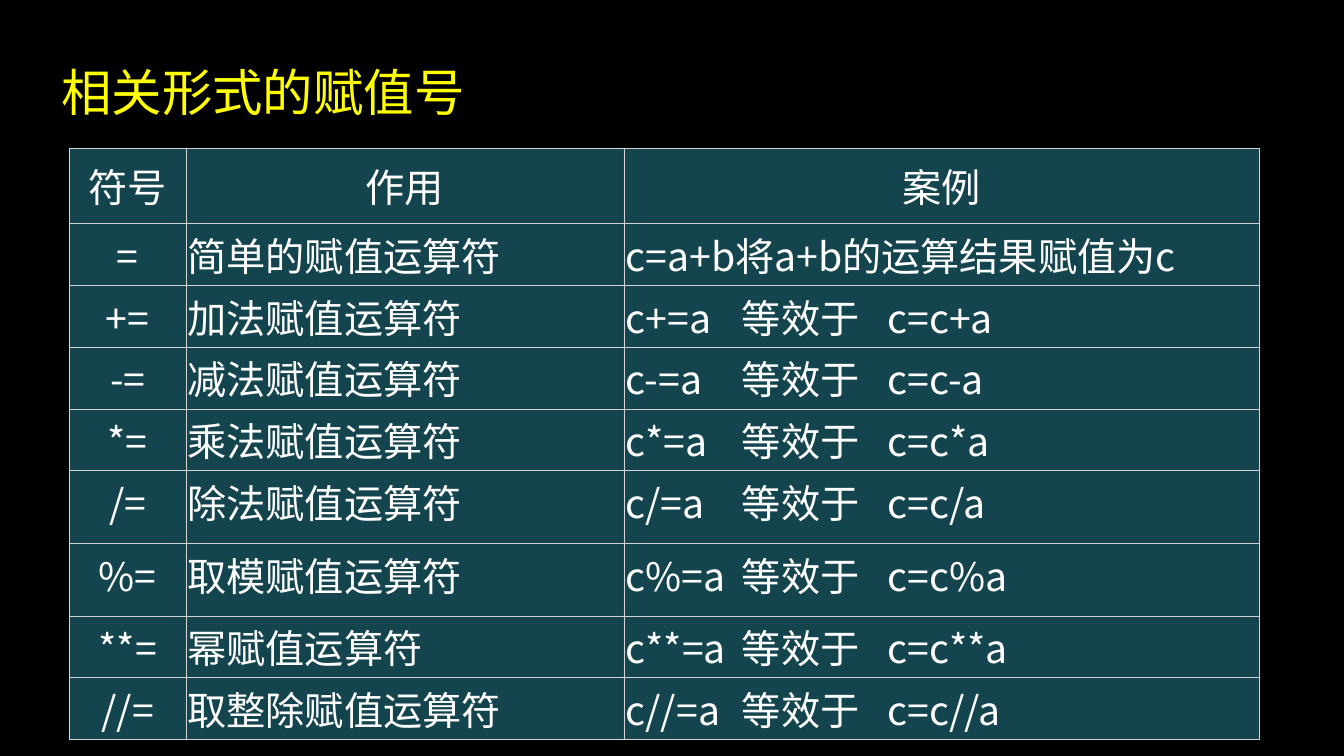
from pptx import Presentation
from pptx.dml.color import RGBColor
from pptx.enum import text as t
from pptx.oxml import parse_xml
from pptx.oxml.ns import nsdecls, qn
from pptx.util import Pt

FACE = "Noto Sans CJK SC"
HEAD = ["符号", "作用", "案例"]
ROWS = [
    ("=", "简单的", "c=a+b将a+b的运算结果赋值为c"),
    ("+=", "加法", "c+=a\t等效于\tc=c+a"),
    ("-=", "减法", "c-=a\t等效于\tc=c-a"),
    ("*=", "乘法", "c*=a\t等效于\tc=c*a"),
    ("/=", "除法", "c/=a\t等效于\tc=c/a"),
    ("%=", "取模", "c%=a\t等效于\tc=c%a"),
    ("**=", "幂", "c**=a\t等效于\tc=c**a"),
    ("//=", "取整除", "c//=a\t等效于\tc=c//a"),
]
WIDTHS = [83, 313, 454]
HEIGHTS = [54, 43, 43, 43, 43, 52, 52, 43, 43]
TABS = [83, 187]


def color(code):
    return RGBColor.from_string(code)


def style(para, size, code):
    for run in para.runs:
        font = run.font
        font.size = Pt(size)
        font.name = FACE
        font.color.rgb = color(code)
        font._element.append(parse_xml(f'<a:ea {nsdecls("a")} typeface="{FACE}"/>'))


def add_tabs(para):
    stops = "".join(f'<a:tab pos="{Pt(pos)}" algn="l"/>' for pos in TABS)
    para._p.get_or_add_pPr().append(
        parse_xml(f'<a:tabLst {nsdecls("a")}>{stops}</a:tabLst>'))


def paint(cell):
    cell.fill.solid()
    cell.fill.fore_color.rgb = color("268496")
    props = cell._tc.get_or_add_tcPr()
    tint = props.find(qn("a:solidFill"))[0]
    tint.append(parse_xml(f'<a:alpha {nsdecls("a")} val="53000"/>'))
    for spot, side in enumerate("LRTB"):
        props.insert(spot, parse_xml(
            f'<a:ln{side} {nsdecls("a")} w="{Pt(0.38)}"><a:solidFill>'
            f'<a:srgbClr val="D4D4D4"/></a:solidFill></a:ln{side}>'))


def add_title(slide, left, top, width, height):
    frame = slide.shapes.add_textbox(Pt(left), Pt(top), Pt(width), Pt(height)).text_frame
    frame.word_wrap = True
    frame.text = "相关形式的赋值号"
    style(frame.paragraphs[0], 36, "FFFF00")


def add_grid(slide, left, top):
    data = [HEAD] + [(sign, name + "赋值运算符", case) for sign, name, case in ROWS]
    table = slide.shapes.add_table(
        len(data), len(HEAD), Pt(left), Pt(top),
        Pt(sum(WIDTHS)), Pt(sum(HEIGHTS))).table
    for column, width in zip(table.columns, WIDTHS):
        column.width = Pt(width)
    for row, height in zip(table.rows, HEIGHTS):
        row.height = Pt(height)
    for r, line in enumerate(data):
        for c, word in enumerate(line):
            cell = table.cell(r, c)
            cell.margin_left = cell.margin_right = Pt(1.3)
            cell.margin_top = cell.margin_bottom = Pt(1.8)
            cell.vertical_anchor = t.MSO_ANCHOR.TOP if r else t.MSO_ANCHOR.MIDDLE
            para = cell.text_frame.paragraphs[0]
            para.text = word
            centred = r == 0 or c == 0
            para.alignment = t.PP_ALIGN.CENTER if centred else t.PP_ALIGN.LEFT
            if "\t" in word:
                add_tabs(para)
            style(para, 28, "FFFFFF")
            paint(cell)


def main():
    deck = Presentation()
    deck.slide_width, deck.slide_height = Pt(960), Pt(540)
    slide = deck.slides.add_slide(deck.slide_layouts[6])
    slide.background.fill.solid()
    slide.background.fill.fore_color.rgb = color("000000")
    add_grid(slide, 49.7, 105.8)
    add_title(slide, 36.7, 40.3, 549.4, 51.1)
    deck.save("out.pptx")


if __name__ == "__main__":
    main()
